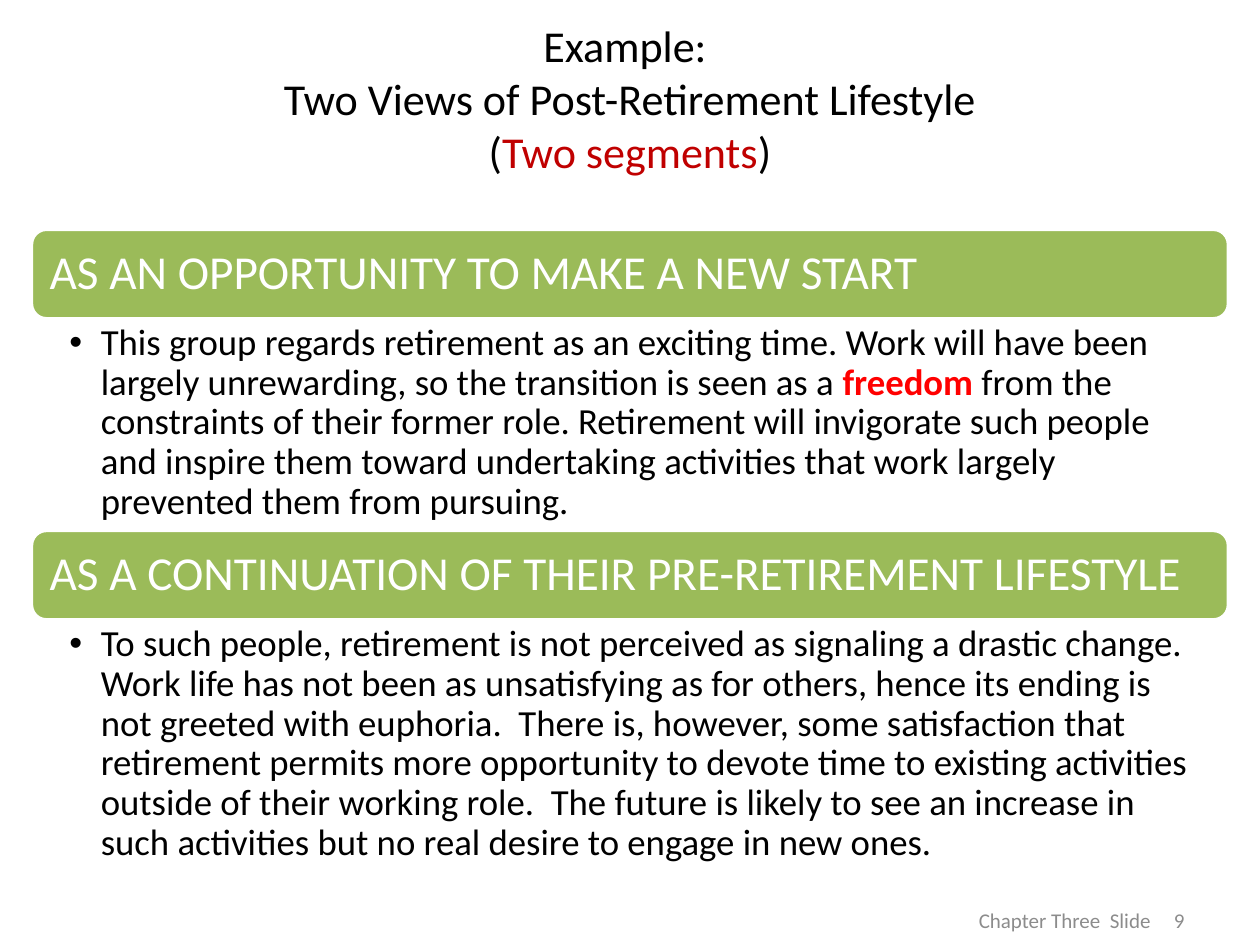
from pptx import Presentation
from pptx.dml.color import RGBColor as RGB
from pptx.enum.shapes import MSO_SHAPE as Shape
from pptx.enum.text import MSO_ANCHOR as Anchor, MSO_AUTO_SIZE as Fit, PP_ALIGN as Align
from pptx.util import Inches, Pt

COLORS = {"green": "9BBB59", "white": "FFFFFF", "black": "000000",
          "red": "FF0000", "dark": "C00000", "gray": "8C8C8C"}


def style(run, size, color, bold=False):
    run.font.name = "Calibri"
    run.font.size = Pt(size)
    run.font.bold = bold
    run.font.color.rgb = RGB.from_string(COLORS[color])


def place(shape, left, top, width, height):
    shape.left, shape.top = Inches(left), Inches(top)
    shape.width, shape.height = Inches(width), Inches(height)


deck = Presentation()
deck.slide_width, deck.slide_height = Inches(10), Inches(7.5)
slide = deck.slides.add_slide(deck.slide_layouts[3])
title, *bodies = slide.placeholders

place(title, 0.5, 0.3, 9, 0.95)
frame = title.text_frame
frame.auto_size = Fit.NONE
frame.vertical_anchor = Anchor.MIDDLE
para = frame.paragraphs[0]
para.alignment = Align.CENTER
para.text = "Example: \vTwo Views of Post-Retirement Lifestyle\v("
for text in ("Two segments", ")"):
    para.add_run().text = text
for run in para.runs:
    style(run, 25.2, "dark" if run.text == "Two segments" else "black")

views = [
    ("AS AN OPPORTUNITY TO MAKE A NEW START", 1.82, 1.68, [
        ("This group regards retirement as an exciting time. Work will have been "
         "largely unrewarding, so the transition is seen as a", "black"),
        (" freedom", "red"),
        (" from the constraints of their former role. Retirement will invigorate "
         "such people and inspire them toward undertaking activities that work "
         "largely prevented them from pursuing.", "black")]),
    ("AS A CONTINUATION OF THEIR PRE-RETIREMENT LIFESTYLE", 4.21, 2.02, [
        ("To such people, retirement is not perceived as signaling a drastic "
         "change.  Work life has not been as unsatisfying as for others, hence its "
         "ending is not greeted with euphoria.  There is, however, some "
         "satisfaction that retirement permits more opportunity to devote time to "
         "existing activities outside of their working role.  The future is likely "
         "to see an increase in such activities but no real desire to engage in "
         "new ones.", "black")]),
]
bar = 0.71
for body, (head, top, height, parts) in zip(bodies, views):
    box = slide.shapes.add_shape(Shape.ROUNDED_RECTANGLE, Inches(0.25), Inches(top),
                                 Inches(9.5), Inches(bar))
    box.shadow.inherit = False
    box.fill.solid()
    box.fill.fore_color.rgb = RGB.from_string(COLORS["green"])
    box.line.color.rgb = RGB.from_string(COLORS["white"])
    box.line.width = Pt(2)
    frame = box.text_frame
    frame.margin_left = frame.margin_right = Inches(0.11)
    frame.vertical_anchor = Anchor.MIDDLE
    para = frame.paragraphs[0]
    para.text = head
    para.alignment = Align.LEFT
    para.line_spacing = 0.9
    style(para.runs[0], 27, "white")

    place(body, 0.25, top + bar, 9.5, height)
    frame = body.text_frame
    frame.auto_size = Fit.NONE
    frame.margin_left, frame.margin_right = Inches(0.3), Inches(0.21)
    frame.margin_top = frame.margin_bottom = Inches(0.04)
    para = frame.paragraphs[0]
    para.line_spacing = 0.9
    para.space_before, para.space_after = Pt(0), Pt(4)
    props = para._p.get_or_add_pPr()
    props.set("marL", str(Inches(0.25)))
    props.set("indent", str(Inches(-0.25)))
    for text, color in parts:
        run = para.add_run()
        run.text = text
        style(run, 21, color, color == "red")

for text, left, width, align in (("Chapter Three  Slide", 7.67, 1.83, Align.LEFT),
                                 ("9", 7.17, 2.33, Align.RIGHT)):
    note = slide.shapes.add_textbox(Inches(left), Inches(7.1), Inches(width), Inches(0.4))
    frame = note.text_frame
    frame.word_wrap = True
    frame.vertical_anchor = Anchor.MIDDLE
    para = frame.paragraphs[0]
    para.text = text
    para.alignment = align
    style(para.runs[0], 12, "gray")

deck.save("out.pptx")
